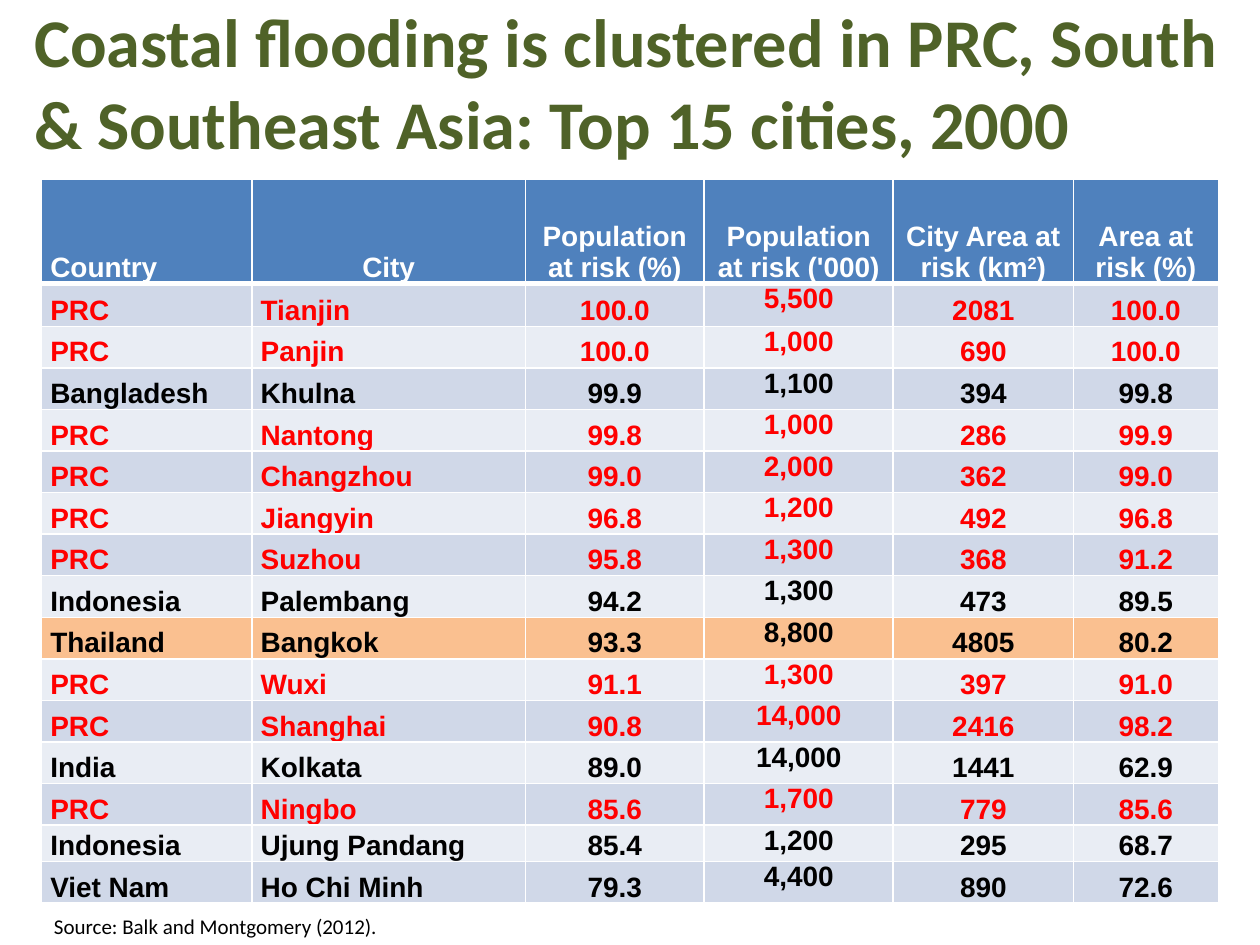
from pptx import Presentation
from pptx.dml.color import RGBColor
from pptx.enum.text import MSO_ANCHOR as Anchor, PP_ALIGN as Align
from pptx.oxml import parse_xml
from pptx.oxml.ns import nsdecls
from pptx.util import Inches, Pt

HEADS = ["Country", "City", "Population at risk (%)", "Population at risk ('000)",
         "City Area at risk (km²)", "Area at risk (%)"]
CITIES = [
    ("PRC", "Tianjin", "100.0", "5,500", "2081", "100.0"),
    ("PRC", "Panjin", "100.0", "1,000", "690", "100.0"),
    ("Bangladesh", "Khulna", "99.9", "1,100", "394", "99.8"),
    ("PRC", "Nantong", "99.8", "1,000", "286", "99.9"),
    ("PRC", "Changzhou", "99.0", "2,000", "362", "99.0"),
    ("PRC", "Jiangyin", "96.8", "1,200", "492", "96.8"),
    ("PRC", "Suzhou", "95.8", "1,300", "368", "91.2"),
    ("Indonesia", "Palembang", "94.2", "1,300", "473", "89.5"),
    ("Thailand", "Bangkok", "93.3", "8,800", "4805", "80.2"),
    ("PRC", "Wuxi", "91.1", "1,300", "397", "91.0"),
    ("PRC", "Shanghai", "90.8", "14,000", "2416", "98.2"),
    ("India", "Kolkata", "89.0", "14,000", "1441", "62.9"),
    ("PRC", "Ningbo", "85.6", "1,700", "779", "85.6"),
    ("Indonesia", "Ujung Pandang", "85.4", "1,200", "295", "68.7"),
    ("Viet Nam", "Ho Chi Minh", "79.3", "4,400", "890", "72.6"),
]
WIDTHS = [1.67, 2.17, 1.42, 1.5, 1.43, 1.15]
HEIGHTS = [0.83, 0.34] + [0.33] * 12 + [0.29, 0.33]
BANDS = ["D0D8E8", "E9EDF4"]


def color(code):
    return RGBColor.from_string(code)


def style(para, name, size, code, bold=False):
    font = para.font
    font.name, font.size, font.bold = name, Pt(size), bold
    font.color.rgb = color(code)


def place(shape, box):
    shape.left, shape.top, shape.width, shape.height = map(Inches, box)


def add_title(slide, box):
    title = slide.shapes.title
    place(title, box)
    frame = title.text_frame
    frame.text = "Coastal flooding is clustered in PRC, South & Southeast Asia: Top 15 cities, 2000"
    frame.vertical_anchor = Anchor.MIDDLE
    para = frame.paragraphs[0]
    para.alignment = Align.LEFT
    style(para, "Calibri", 39, "4F6228", True)


def set_edges(cell, foot):
    """Draw white cell borders, the bottom one foot points wide."""
    props = cell._tc.get_or_add_tcPr()
    for side, width in (("L", 1), ("R", 1), ("T", 1), ("B", foot)):
        props.append(parse_xml(
            f'<a:ln{side} {nsdecls("a")} w="{Pt(width)}"><a:solidFill>'
            f'<a:srgbClr val="FFFFFF"/></a:solidFill></a:ln{side}>'))


def write(para, text):
    """Add text, with ² set as a raised 2."""
    base, mark, rest = text.partition("²")
    para.add_run().text = base
    if mark:
        power = para.add_run()
        power.text = "2"
        power._r.get_or_add_rPr().set("baseline", "30000")
        para.add_run().text = rest


def fill_cell(cell, text, fill, ink, align, anchor, foot):
    set_edges(cell, foot)
    cell.fill.solid()
    cell.fill.fore_color.rgb = color(fill)
    cell.margin_left = cell.margin_right = Inches(0.07)
    cell.margin_top = cell.margin_bottom = 0
    cell.vertical_anchor = anchor
    para = cell.text_frame.paragraphs[0]
    write(para, text)
    para.alignment = align
    style(para, "Arial", 16, ink, True)


def row_look(row, land):
    """Return the fill and text colours of a row."""
    if row == 0:
        return "4F81BD", "FFFFFF"
    fill = "FAC090" if land == "Thailand" else BANDS[(row - 1) % 2]
    return fill, "FF0000" if land == "PRC" else "000000"


def add_cities(slide, box):
    rows = [HEADS] + CITIES
    table = slide.shapes.add_table(len(rows), len(HEADS), *map(Inches, box)).table
    for col, width in zip(table.columns, WIDTHS):
        col.width = Inches(width)
    for line, height in zip(table.rows, HEIGHTS):
        line.height = Inches(height)
    for r, row in enumerate(rows):
        fill, ink = row_look(r, row[0])
        for c, text in enumerate(row):
            left = c == 0 or (c == 1 and r > 0)
            align = Align.LEFT if left else Align.CENTER
            anchor = Anchor.TOP if c == 3 and r > 0 else Anchor.BOTTOM
            fill_cell(table.cell(r, c), text, fill, ink, align, anchor, 1 if r else 3)


def add_source(slide, box):
    frame = slide.shapes.add_textbox(*map(Inches, box)).text_frame
    frame.word_wrap = False
    frame.text = "Source: Balk and Montgomery (2012)."
    style(frame.paragraphs[0], "Calibri", 12, "000000")


def main():
    deck = Presentation()
    deck.slide_width, deck.slide_height = Inches(10), Inches(7.5)
    slide = deck.slides.add_slide(deck.slide_layouts[5])
    add_title(slide, (0.17, 0.17, 10, 0.95))
    add_cities(slide, (0.33, 1.42, sum(WIDTHS), sum(HEIGHTS)))
    add_source(slide, (0.33, 7.2, 2.79, 0.3))
    deck.save("out.pptx")


if __name__ == "__main__":
    main()
